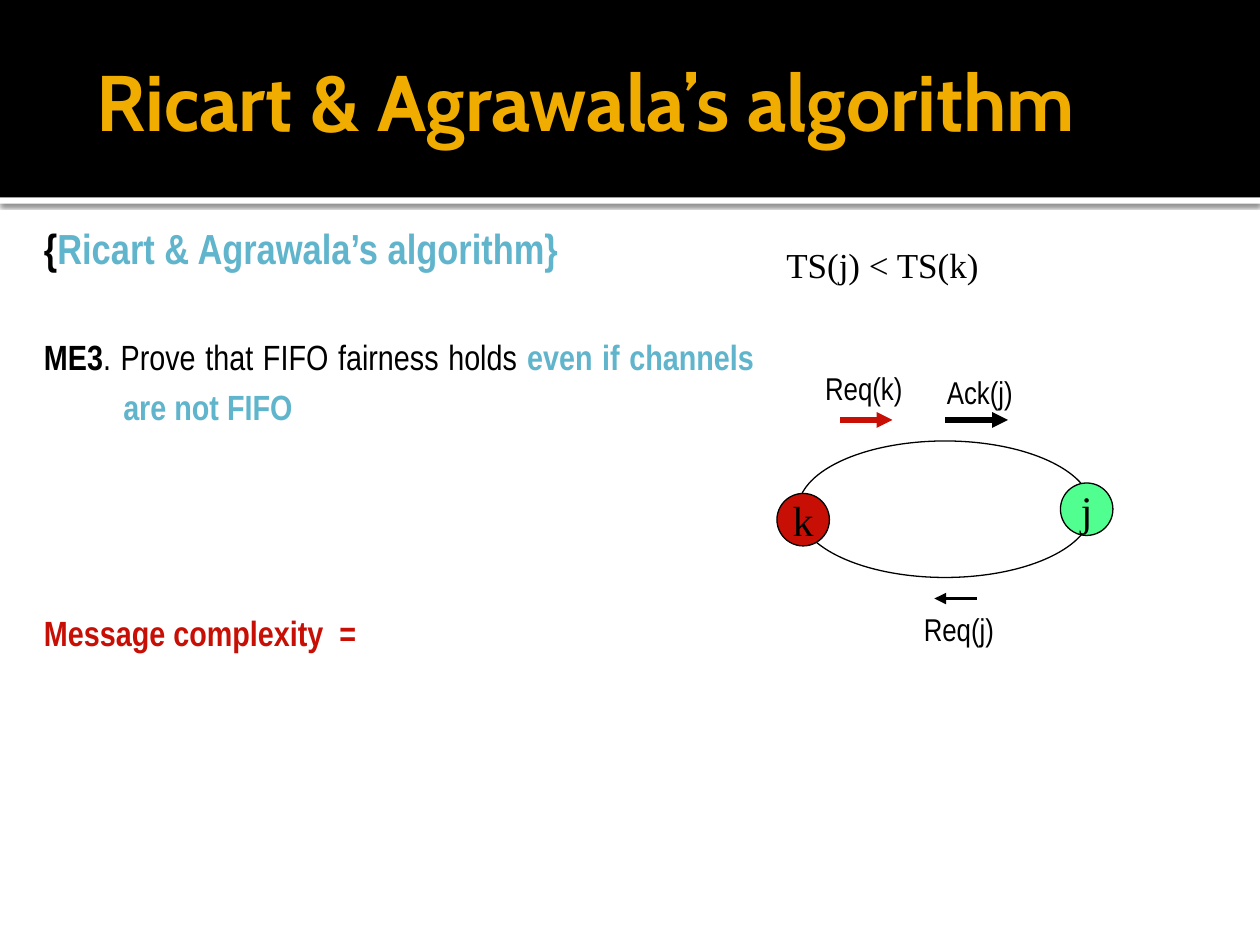
from dataclasses import dataclass

from lxml.etree import SubElement
from pptx import Presentation
from pptx.dml.color import RGBColor as RGB
from pptx.enum.shapes import MSO_CONNECTOR as CONN, MSO_SHAPE as SHAPE
from pptx.enum.text import MSO_ANCHOR as ANCHOR, PP_ALIGN as ALIGN
from pptx.oxml.ns import qn
from pptx.util import Inches, Pt


@dataclass(frozen=True)
class Theme:
    """Colours, fonts and type sizes of the slide."""
    black: str = "000000"
    white: str = "FFFFFF"
    gold: str = "F0AD00"
    blue: str = "60B5CC"
    red: str = "C70F05"
    green: str = "51FF91"
    head: str = "Cabin"
    body: str = "Arial Narrow"
    serif: str = "Times New Roman"
    title: int = 45
    large: int = 24
    medium: int = 20
    small: int = 18


T = Theme()
COLS, ROWS = 120, 90
CELL = Inches(10) // COLS


@dataclass(frozen=True)
class Box:
    """A region measured in grid columns and rows."""
    x: float
    y: float
    w: float
    h: float

    def sub(self, x, y, w, h):
        """Return a box placed relative to this one."""
        return Box(self.x + x, self.y + y, w, h)

    def emu(self):
        """Return left, top, width and height as lengths."""
        return [round(v * CELL) for v in (self.x, self.y, self.w, self.h)]


def style(font, name, size, color=T.black, bold=False):
    """Set the face, size, colour and weight of a font."""
    font.name, font.size, font.bold = name, Pt(size), bold
    font.color.rgb = RGB.from_string(color)


def add_shape(s, kind, box, fill=None, line=None):
    """Add a flat preset shape."""
    sp = s.shapes.add_shape(kind, *box.emu())
    sp.shadow.inherit = False
    if fill:
        sp.fill.solid()
        sp.fill.fore_color.rgb = RGB.from_string(fill)
    else:
        sp.fill.background()
    if line:
        sp.line.color.rgb = RGB.from_string(line)
        sp.line.width = Pt(0.75)
    else:
        sp.line.fill.background()
    return sp


def add_text(s, box, wrap=True):
    """Add a text box and return its frame."""
    tf = s.shapes.add_textbox(*box.emu()).text_frame
    tf.word_wrap = wrap
    return tf


def add_arrow(s, box, x1, x2, y, color, width):
    """Add a level arrow inside the box."""
    start, end = box.sub(x1, y, 0, 0).emu(), box.sub(x2, y, 0, 0).emu()
    c = s.shapes.add_connector(CONN.STRAIGHT, *start[:2], *end[:2])
    c.line.color.rgb = RGB.from_string(color)
    c.line.width = Pt(width)
    SubElement(c.line._get_or_add_ln(), qn("a:tailEnd"), type="triangle")
    SubElement(c._element.spPr, qn("a:effectLst"))


def add_header(s, box):
    """Draw the title band with its shadowed white edge."""
    edge = add_shape(s, SHAPE.RECTANGLE, box.sub(0, box.h, box.w, 0.6), T.white)
    shadow = SubElement(edge._element.spPr.find(qn("a:effectLst")), qn("a:outerShdw"),
                        blurRad=str(Pt(2.5)), dist=str(Pt(0.8)), dir="5400000",
                        algn="t", rotWithShape="0")
    color = SubElement(shadow, qn("a:srgbClr"), val=T.black)
    SubElement(color, qn("a:alpha"), val="60000")
    add_shape(s, SHAPE.RECTANGLE, box, T.black)
    tf = add_text(s, box.sub(8, 2, 102, 15))
    tf.vertical_anchor = ANCHOR.MIDDLE
    p = tf.paragraphs[0]
    p.text = "Ricart & Agrawala’s algorithm"
    style(p.font, T.head, T.title, T.gold, True)


def add_body(s, box):
    """Write the justified statements with hanging indents."""
    tf = add_text(s, box)
    tf.margin_top = Inches(0.1)
    paragraphs = [
        (T.large, 1.2, 0, [("{", T.black, True),
                           ("Ricart & Agrawala’s algorithm}", T.blue, True)]),
        (T.medium, 1.2, 31, [("ME3", T.black, True),
                             (". Prove that FIFO fairness holds ", T.black, False),
                             ("even if channels are not FIFO", T.blue, True)]),
        (T.medium, 0.9, 108, [("Message complexity  =", T.red, True)]),
    ]
    for i, (size, spacing, before, runs) in enumerate(paragraphs):
        p = tf.add_paragraph() if i else tf.paragraphs[0]
        p.alignment, p.line_spacing, p.space_before = ALIGN.JUSTIFY, spacing, Pt(before)
        pPr = p._p.get_or_add_pPr()
        pPr.set("marL", str(Inches(0.63)))
        pPr.set("indent", str(-Inches(0.63)))
        for text, color, bold in runs:
            r = p.add_run()
            r.text = text
            style(r.font, T.body, size, color, bold)


def add_condition(s, box):
    """Write the timestamp condition above the diagram."""
    tf = add_text(s, box)
    tf.margin_top = Inches(0.1)
    p = tf.paragraphs[0]
    p.text = "TS(j) < TS(k)"
    style(p.font, T.serif, T.medium)


def add_diagram(s, box):
    """Draw the two processes, their channels and messages."""
    add_shape(s, SHAPE.OVAL, box.sub(2, 8, 28, 13), line=T.black)
    for name, x, y, fill in (("k", 0, 13, T.red), ("j", 27, 12, T.green)):
        sp = add_shape(s, SHAPE.OVAL, box.sub(x, y, 5, 5), fill, T.black)
        tf = sp.text_frame
        tf.word_wrap, tf.vertical_anchor = False, ANCHOR.MIDDLE
        p = tf.paragraphs[0]
        p.text, p.alignment = name, ALIGN.CENTER
        style(p.font, T.serif, T.large)
    messages = [
        ("Req(k)", 3.4, 0.6, 9.8, 6, 11, 6, T.red, 3),
        ("Ack(j)", 15, 0.9, 8.8, 16, 22, 6, T.black, 3),
        ("Req(j)", 12.8, 23.5, 9.1, 19, 15, 23, T.black, 2.25),
    ]
    for text, x, y, w, x1, x2, row, color, width in messages:
        add_arrow(s, box, x1, x2, row, color, width)
        p = add_text(s, box.sub(x, y, w, 4.8), wrap=False).paragraphs[0]
        p.text = text
        style(p.font, T.body, T.small)


def main():
    """Build and save the slide."""
    prs = Presentation()
    prs.slide_width, prs.slide_height = COLS * CELL, ROWS * CELL
    s = prs.slides.add_slide(prs.slide_layouts[6])
    add_header(s, Box(0, 0, COLS, 18.8))
    add_body(s, Box(3, 19, 70, 60))
    add_condition(s, Box(73.7, 22, 38, 5))
    add_diagram(s, Box(74, 34, 32, 29))
    prs.save("out.pptx")


if __name__ == "__main__":
    main()
